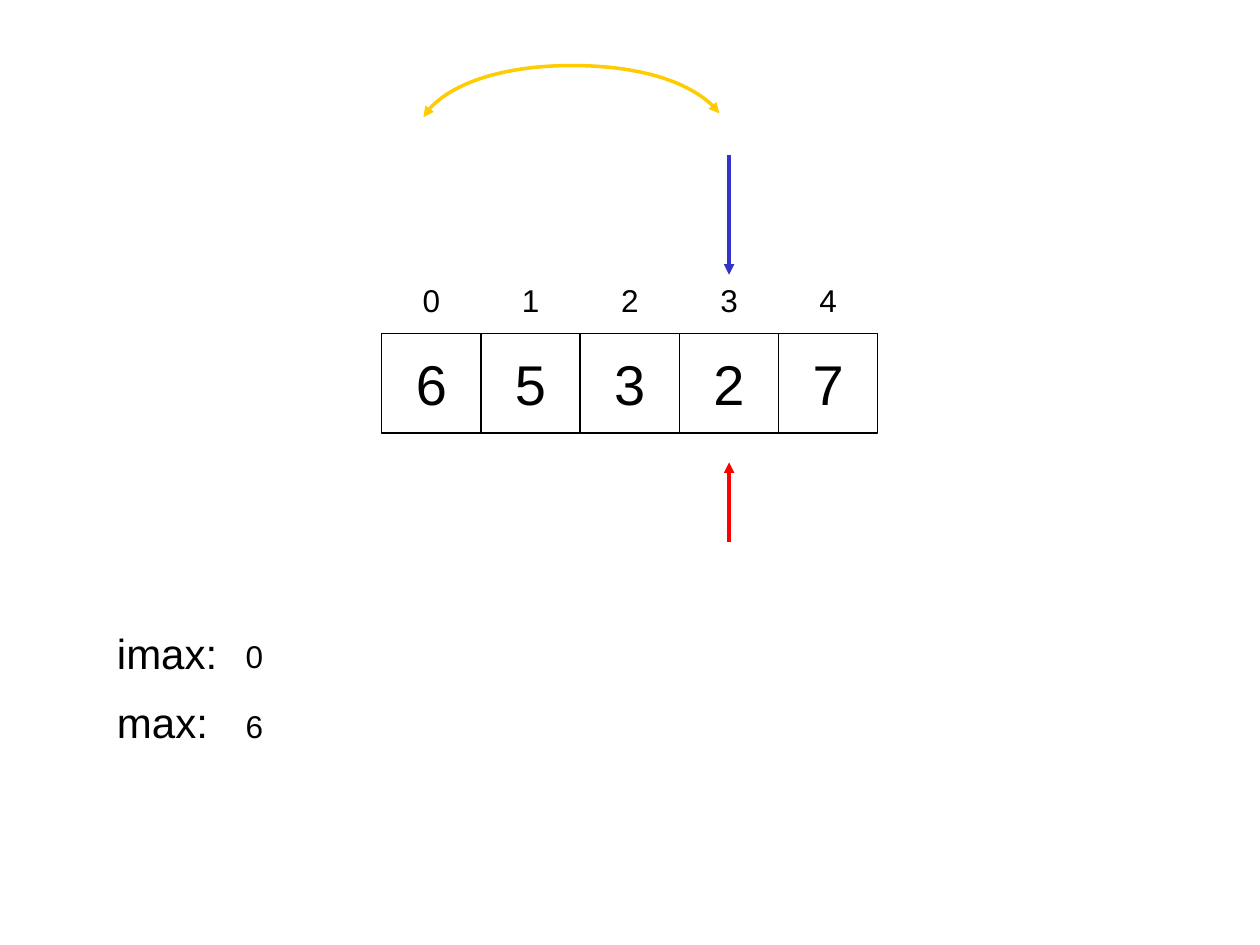
import pptx
import pptx.util
import pptx.dml.color
import pptx.enum.shapes
import pptx.enum.text
import pptx.oxml
import pptx.oxml.ns
from pptx.util import Inches

ALIGN = pptx.enum.text.PP_ALIGN
qn = pptx.oxml.ns.qn


def color(value):
    return pptx.dml.color.RGBColor.from_string(value)


def set_text(s, text, size, align):
    tf = s.text_frame
    tf.text = text
    p = tf.paragraphs[0]
    p.alignment = align
    font = p.runs[0].font
    font.name = "Arial"
    font.size = pptx.util.Pt(size)
    font.color.rgb = color("000000")


prs = pptx.Presentation()
prs.slide_width, prs.slide_height = Inches(10), Inches(7.5)
shapes = prs.slides.add_slide(prs.slide_layouts[6]).shapes

# Array cells with their indices above
left, top, cell = 3.03, 2.65, 0.7875
for i, value in enumerate("65327"):
    x = Inches(left + i * cell)
    s = shapes.add_shape(pptx.enum.shapes.MSO_SHAPE.RECTANGLE,
                         x, Inches(top), Inches(cell), Inches(cell))
    s.shadow.inherit = False
    s.fill.background()
    s.line.color.rgb = color("000000")
    s.line.width = pptx.util.Pt(0.75)
    set_text(s, value, 32, ALIGN.CENTER)
    s.text_frame.word_wrap = False
    s.text_frame.vertical_anchor = pptx.enum.text.MSO_ANCHOR.MIDDLE

    label = shapes.add_textbox(x, Inches(2.18), Inches(cell), Inches(0.39))
    label.text_frame.word_wrap = True
    set_text(label, str(i), 18, ALIGN.CENTER)

# Variables: name and value
for y, name, value in [(4.93, "imax:", "0"), (5.48, "max:", "6")]:
    for x, dy, w, h, text, size in [(0.83, 0, 1.1, 0.5, name, 24),
                                    (1.85, 0.08, 0.31, 0.4, value, 18)]:
        s = shapes.add_textbox(Inches(x), Inches(y + dy), Inches(w), Inches(h))
        s.text_frame.word_wrap = True
        s.text_frame.auto_size = pptx.enum.text.MSO_AUTO_SIZE.SHAPE_TO_FIT_TEXT
        set_text(s, text, size, ALIGN.LEFT)

# Pointers to the current cell
arrows = []
x = Inches(left + 3.5 * cell)
for y1, y2, line_color in [(1.23, 2.18, "3333CC"), (4.3, 3.67, "FF0000")]:
    s = shapes.add_connector(pptx.enum.shapes.MSO_CONNECTOR.STRAIGHT,
                             x, Inches(y1), x, Inches(y2))
    arrows.append((s, line_color, ["tailEnd"]))

# Swap arc: each three points become one Bezier segment
points = [(Inches(px), Inches(py)) for px, py in [
    (3.36, 0.93), (3.5, 0.69), (3.99, 0.52), (4.54, 0.52),
    (5.07, 0.52), (5.54, 0.67), (5.71, 0.9)]]
builder = shapes.build_freeform(*points[0], scale=1.0)
builder.add_line_segments(points[1:], close=False)
arc = builder.convert_to_shape()
arc.shadow.inherit = False
arc.fill.background()
outline = next(arc._element.iter(qn("a:path")))
segments = outline.findall(qn("a:lnTo"))
for i in range(0, len(segments), 3):
    curve = pptx.oxml.ns.nsdecls("a")
    curve = pptx.oxml.parse_xml(f"<a:cubicBezTo {curve}/>")
    for segment in segments[i:i + 3]:
        curve.append(segment[0])
        outline.remove(segment)
    outline.append(curve)
arrows.append((arc, "FFCC00", ["headEnd", "tailEnd"]))

# Arrow lines and heads
for s, line_color, ends in arrows:
    s.line.color.rgb = color(line_color)
    s.line.width = pptx.util.Pt(2)
    ln = s._element.spPr.find(qn("a:ln"))
    for end in ends:
        ln.append(ln.makeelement(qn(f"a:{end}"), {"type": "triangle"}))
    if s is not arc:
        s._element.spPr.append(ln.makeelement(qn("a:effectLst"), {}))

prs.save("out.pptx")
